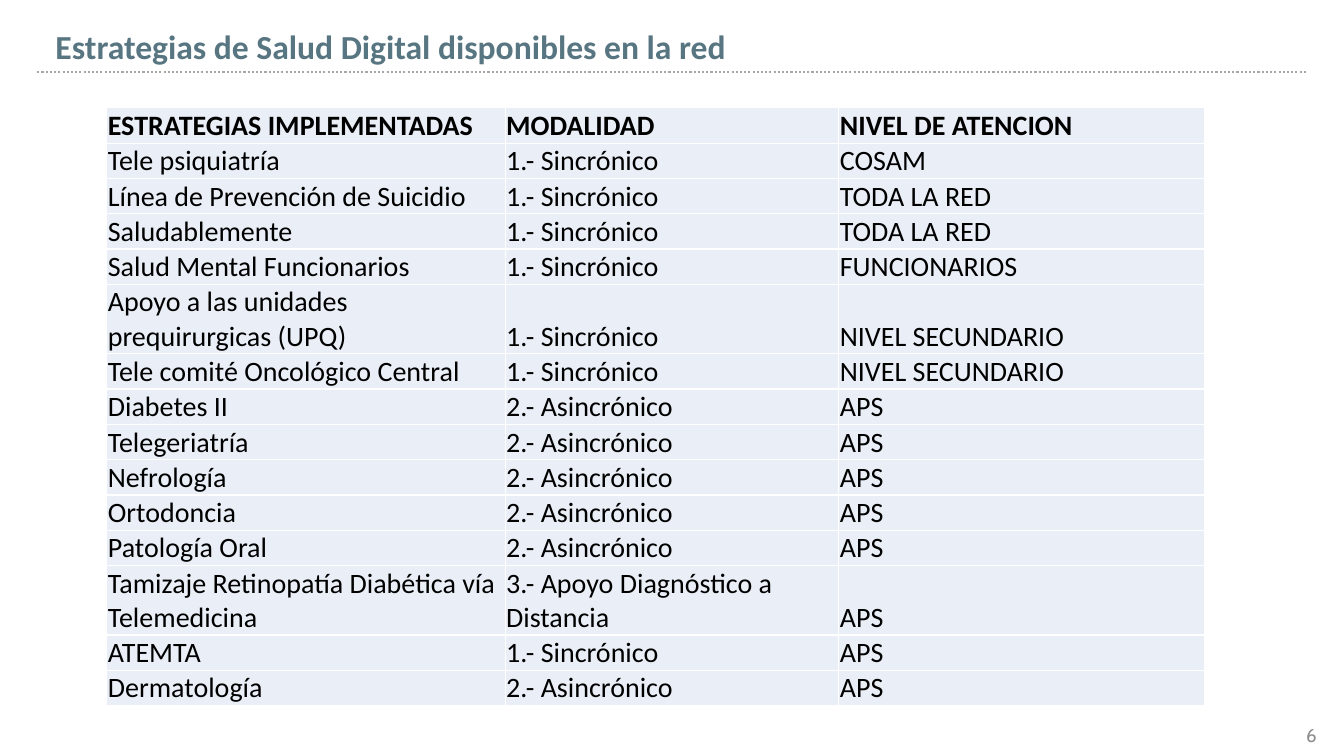
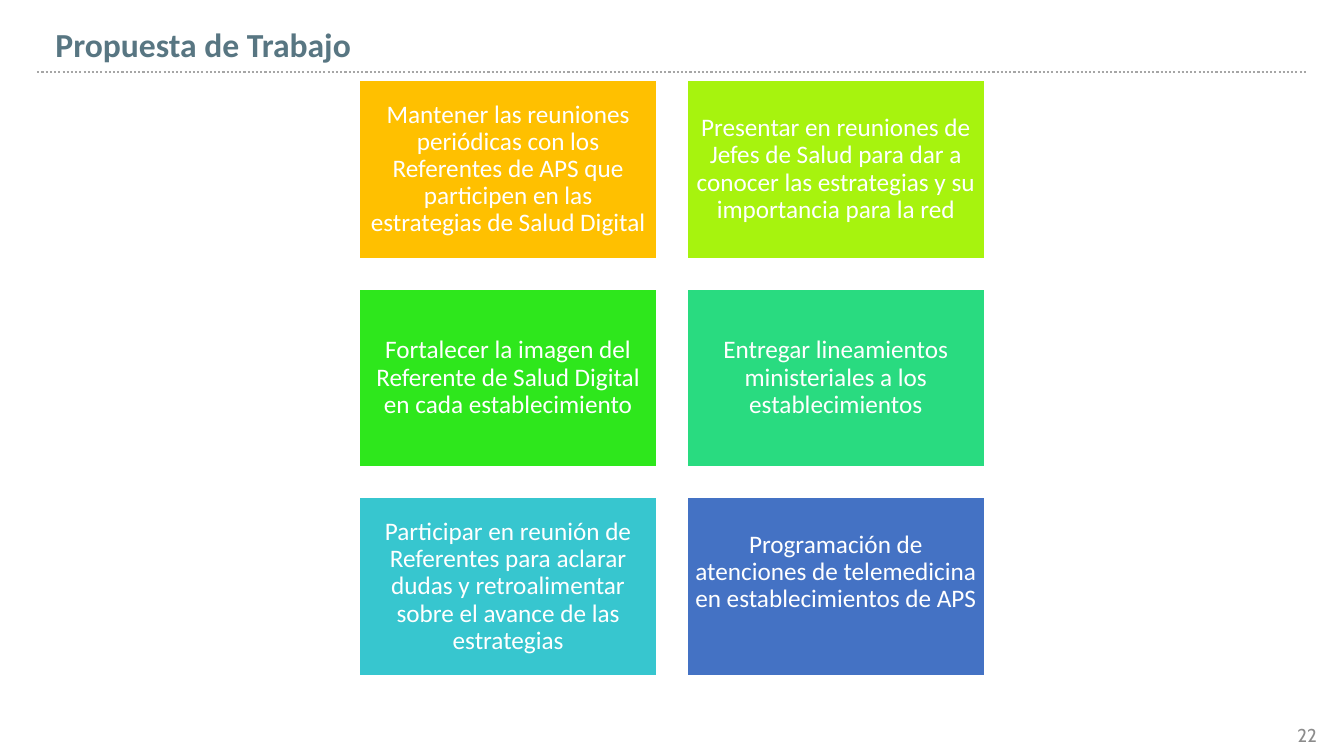
"""Builds two slides on digital health strategies: a table of strategies and a grid of work proposals."""
from lxml.etree import SubElement
from pptx import Presentation
from pptx.dml.color import RGBColor
from pptx.enum.dml import MSO_LINE
from pptx.enum.shapes import MSO_CONNECTOR, MSO_SHAPE
from pptx.enum.text import MSO_ANCHOR, PP_ALIGN
from pptx.oxml.ns import qn
from pptx.util import Inches, Pt

COLORS = {
    "title": "587682", "rule": "A6A6A6", "number": "8C8C8C",
    "cell": "EAEFF7", "ink": "000000", "white": "FFFFFF",
    "amber": "FFC000", "lime": "A7F30E", "green": "2EE71C",
    "emerald": "29DB80", "turquoise": "37C6CF", "blue": "4472C4",
}
WIDTH, HEIGHT = 13.33, 7.5


def color(name):
    return RGBColor.from_string(COLORS[name])


def write(frame, text, size=18, ink="ink", font="Calibri", bold=False, align=PP_ALIGN.LEFT,
          anchor=MSO_ANCHOR.MIDDLE, spacing=1.0, margins=(0.1, 0.05, 0.1, 0.05)):
    frame.word_wrap = True
    frame.vertical_anchor = anchor
    (frame.margin_left, frame.margin_top,
     frame.margin_right, frame.margin_bottom) = [Inches(margin) for margin in margins]
    paragraph = frame.paragraphs[0]
    paragraph.alignment = align
    paragraph.line_spacing = spacing
    run = paragraph.add_run()
    run.text = text
    run.font.name = font
    run.font.size = Pt(size)
    run.font.bold = bold
    run.font.color.rgb = color(ink)


deck = Presentation()
deck.slide_width, deck.slide_height = Inches(WIDTH), Inches(HEIGHT)
title_only = deck.slide_layouts[5]

headings = [
    ("Estrategias de Salud Digital disponibles en la red", "6", 1.0),
    ("Propuesta de Trabajo", "22", 0.9),
]
for heading, number, spacing in headings:
    slide = deck.slides.add_slide(title_only)
    title = slide.shapes.title
    title.left, title.top, title.width, title.height = map(Inches, (0.45, 0.08, 12.75, 0.76))
    write(title.text_frame, heading, size=24, ink="title", bold=True, spacing=spacing)

    rule = slide.shapes.add_connector(
        MSO_CONNECTOR.STRAIGHT, Inches(0.37), Inches(0.71), Inches(12.97), Inches(0.71))
    rule.line.color.rgb = color("rule")
    rule.line.width = Pt(1.5)
    rule.line.dash_style = MSO_LINE.ROUND_DOT
    SubElement(rule.element.spPr, qn("a:effectLst"))

    page = slide.shapes.add_textbox(Inches(10.19), Inches(7.09), Inches(3), Inches(0.4))
    write(page.text_frame, number, size=13.3, ink="number", font="Cabin",
          align=PP_ALIGN.RIGHT, margins=(0.13, 0.07, 0.13, 0.07))

strategies_slide, proposal_slide = deck.slides

live, deferred = "1.- Sincrónico", "2.- Asincrónico"
strategies = [
    ("ESTRATEGIAS IMPLEMENTADAS", "MODALIDAD", "NIVEL DE ATENCION"),
    ("Tele psiquiatría", live, "COSAM"),
    ("Línea de Prevención de Suicidio", live, "TODA LA RED"),
    ("Saludablemente", live, "TODA LA RED"),
    ("Salud Mental Funcionarios", live, "FUNCIONARIOS"),
    ("Apoyo a las unidades prequirurgicas (UPQ)", live, "NIVEL SECUNDARIO"),
    ("Tele comité Oncológico Central", live, "NIVEL SECUNDARIO"),
    ("Diabetes II", deferred, "APS"),
    ("Telegeriatría", deferred, "APS"),
    ("Nefrología", deferred, "APS"),
    ("Ortodoncia", deferred, "APS"),
    ("Patología Oral", deferred, "APS"),
    ("Tamizaje Retinopatía Diabética vía Telemedicina", "3.- Apoyo Diagnóstico a Distancia", "APS"),
    ("ATEMTA", live, "APS"),
    ("Dermatología", deferred, "APS"),
]
column_widths = [3.95, 3.31, 3.63]
line_height, two_line_rows = 0.35, (5, 12)
table = strategies_slide.shapes.add_table(
    len(strategies), len(column_widths), Inches(1.06), Inches(1.07),
    Inches(sum(column_widths)), Inches(line_height * len(strategies))).table
table.horz_banding = False
for column, width in zip(table.columns, column_widths):
    column.width = Inches(width)
for row_index, strategy in enumerate(strategies):
    table.rows[row_index].height = Inches(0.69 if row_index in two_line_rows else line_height)
    for column_index, entry in enumerate(strategy):
        cell = table.cell(row_index, column_index)
        write(cell.text_frame, entry, size=20, bold=row_index == 0)
        cell.vertical_anchor = MSO_ANCHOR.BOTTOM
        cell.margin_left = cell.margin_top = cell.margin_right = Inches(0.01)
        cell.margin_bottom = 0
        properties = cell._tc.get_or_add_tcPr()
        for side in ("a:lnL", "a:lnR", "a:lnT", "a:lnB"):
            border = SubElement(properties, qn(side), w=str(Pt(1)))
            SubElement(SubElement(border, qn("a:solidFill")), qn("a:srgbClr"), val=COLORS["white"])
        cell.fill.solid()
        cell.fill.fore_color.rgb = color("cell")

proposals = [
    ("amber", "Mantener las reuniones periódicas con los Referentes de APS que participen "
              "en las estrategias de Salud Digital", 0.07),
    ("lime", "Presentar en reuniones de Jefes de Salud para dar a conocer las estrategias "
             "y su importancia para la red", 0.07),
    ("green", "Fortalecer la imagen del Referente de Salud Digital en cada establecimiento", 0.07),
    ("emerald", "Entregar lineamientos ministeriales a los establecimientos", 0.07),
    ("turquoise", "Participar en reunión de Referentes para aclarar dudas y retroalimentar "
                  "sobre el avance de las estrategias", 0.07),
    ("blue", "Programación de atenciones de telemedicina en establecimientos de APS", 0.35),
]
columns, card_width, card_height, gap = 2, 2.96, 1.78, 0.29
grid_left = (WIDTH - columns * card_width - (columns - 1) * gap) / 2
grid_top = 0.79
for index, (fill, proposal, bottom_margin) in enumerate(proposals):
    row, column = divmod(index, columns)
    card = proposal_slide.shapes.add_shape(
        MSO_SHAPE.RECTANGLE, Inches(grid_left + column * (card_width + gap)),
        Inches(grid_top + row * (card_height + gap)), Inches(card_width), Inches(card_height))
    card.shadow.inherit = False
    card.fill.solid()
    card.fill.fore_color.rgb = color(fill)
    card.line.color.rgb = color("white")
    card.line.width = Pt(2)
    write(card.text_frame, proposal, ink="white", align=PP_ALIGN.CENTER, spacing=0.9,
          margins=(0.07, 0.07, 0.07, bottom_margin))

deck.save("out.pptx")
